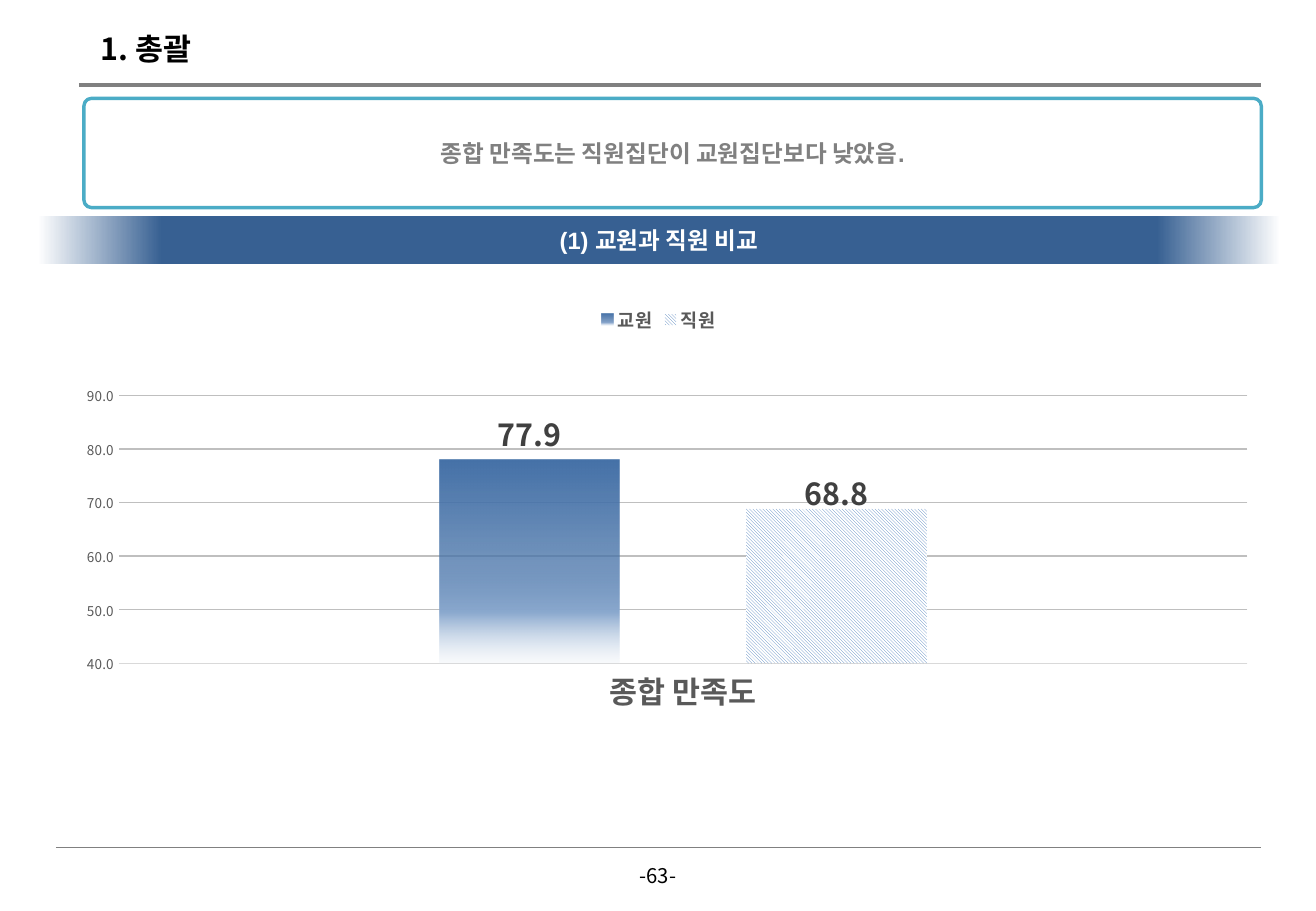
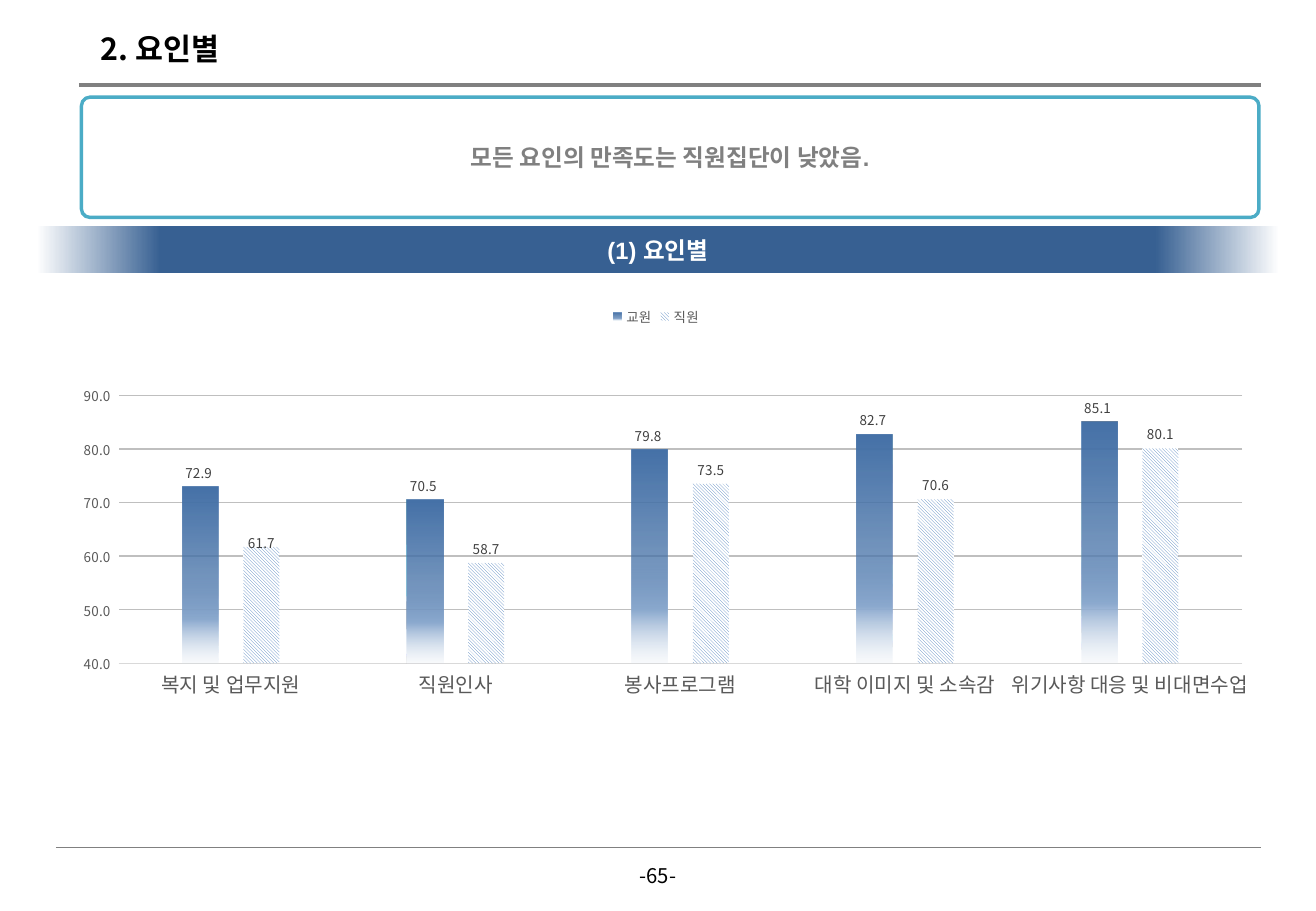
"""Build two satisfaction survey slides, each with a message, a band and a column chart."""
from lxml import etree
from pptx import Presentation
from pptx.chart.data import CategoryChartData
from pptx.dml.color import RGBColor
from pptx.enum import chart as ch, dml, shapes, text
from pptx.oxml.ns import qn
from pptx.util import Inches, Pt

WIDTH, HEIGHT = 10.83, 7.5
HANGUL = "Noto Sans CJK KR"
GRAY, TEAL, NAVY, WHITE, BLACK = "808080", "4BACC6", "376092", "FFFFFF", "000000"
AXIS_TEXT, LABEL_TEXT, AXIS_LINE, GRID = "595959", "404040", "D9D9D9", "BFBFBF"
HATCH = "4F81BD"
BAND_STOPS = [(0, WHITE, 100), (10, NAVY, 100), (90, NAVY, 100), (100, WHITE, 100)]
COLUMN_STOPS = [(0, "4672A8", 100), (51, "4672A8", 75), (75, "8CAACF", 100), (100, "D9E3EF", 15)]
RULES = [(0.65, 0.7, 2), (0.46, 6.98, 0.5)]
RULE_END = 10.38
PLOT = {"x": 0.041, "y": 0.199, "w": 0.959, "h": 0.519}
PLAIN, SIGNED = "###0.0", "0.0_);[Red]\\(0.0\\)"

SLIDES = [
    dict(title="1. 총괄", page="-63-",
         message="종합 만족도는 직원집단이 교원집단보다 낮았음.", message_at=(0.69, 0.81, 9.69, 0.9),
         band="(1) 교원과 직원 비교", band_at=(0.31, 1.78, 10.23, 0.39),
         factors=["종합 만족도"], scores={"교원": [77.9], "직원": [68.8]},
         formats=[PLAIN, PLAIN], bold=True, factor_size=18, legend_size=11, label_size=18),
    dict(title="2. 요인별", page="-65-",
         message="모든 요인의 만족도는 직원집단이 낮았음.", message_at=(0.67, 0.8, 9.69, 0.99),
         band="(1) 요인별", band_at=(0.3, 1.86, 10.23, 0.39),
         factors=["복지 및 업무지원", "직원인사", "봉사프로그램", "대학 이미지 및 소속감", "위기사항 대응 및 비대면수업"],
         scores={"교원": [72.9, 70.5, 79.8, 82.7, 85.1], "직원": [61.7, 58.7, 73.5, 70.6, 80.1]},
         formats=[SIGNED, PLAIN], bold=False, factor_size=12, legend_size=8, label_size=8),
]


def color(value):
    return RGBColor.from_string(value)


def inches(box):
    return [Inches(length) for length in box]


def style(font, size, fill, bold=False, face=HANGUL):
    font.size, font.bold, font.name = Pt(size), bold, face
    font.fill.solid()
    font.fill.fore_color.rgb = color(fill)
    east = etree.Element(qn("a:ea"), typeface=HANGUL)
    font._element.find(qn("a:latin")).addnext(east)


def write(shape, words, align=text.PP_ALIGN.CENTER, wrap=True, anchor=text.MSO_ANCHOR.MIDDLE,
          side=0.1, **look):
    frame = shape.text_frame
    frame.word_wrap, frame.vertical_anchor = wrap, anchor
    frame.margin_left = frame.margin_right = Inches(side)
    paragraph = frame.paragraphs[0]
    paragraph.alignment = align
    run = paragraph.add_run()
    run.text = words
    style(run.font, **look)


def gradient(fill, owner, stops, angle):
    fill.gradient()
    grad = owner.find(".//" + qn("a:gradFill"))
    listing = grad.find(qn("a:gsLst"))
    for stop in list(listing):
        listing.remove(stop)
    for share, value, opacity in stops:
        stop = etree.SubElement(listing, qn("a:gs"), pos=str(share * 1000))
        tone = etree.SubElement(stop, qn("a:srgbClr"), val=value)
        if opacity < 100:
            etree.SubElement(tone, qn("a:alpha"), val=str(opacity * 1000))
    grad.find(qn("a:lin")).set("ang", str(angle * 60000))


def manual_layout(parent, **values):
    layout = etree.SubElement(parent, qn("c:layout"))
    manual = etree.SubElement(layout, qn("c:manualLayout"))
    for tag, value in values.items():
        etree.SubElement(manual, qn("c:" + tag), val=str(value))
    return layout


def add_frame(slide, title, page):
    for left, top, weight in RULES:
        rule = slide.shapes.add_connector(
            shapes.MSO_CONNECTOR.STRAIGHT, *inches((left, top, RULE_END, top)))
        rule.line.color.rgb, rule.line.width = color(GRAY), Pt(weight)
        etree.SubElement(rule._element.spPr, qn("a:effectLst"))
    write(slide.shapes.add_textbox(*inches((0.73, 0.2, 1.26, 0.4))), title,
          align=text.PP_ALIGN.LEFT, wrap=False, size=18, fill=BLACK, bold=True)
    write(slide.shapes.add_textbox(*inches((5.14, 7.06, 0.55, 0.3))), page,
          wrap=False, size=12, fill=BLACK)


def add_message(slide, words, box):
    message = slide.shapes.add_shape(shapes.MSO_SHAPE.ROUNDED_RECTANGLE, *inches(box))
    message.shadow.inherit = False
    message.adjustments[0] = 0.071
    message.fill.solid()
    message.fill.fore_color.rgb = color(WHITE)
    message.line.color.rgb, message.line.width = color(TEAL), Pt(2)
    write(message, words, side=0.2, size=14, fill=GRAY, bold=True, face="Arial")


def add_band(slide, words, box):
    band = slide.shapes.add_shape(shapes.MSO_SHAPE.RECTANGLE, *inches(box))
    band.shadow.inherit = False
    band.line.fill.background()
    gradient(band.fill, band._element, BAND_STOPS, 0)
    write(band, words, size=14, fill=WHITE, bold=True, face="Arial")


def format_axes(chart, content):
    factors, scale = chart.category_axis, chart.value_axis
    for axis in (factors, scale):
        axis.major_tick_mark = axis.minor_tick_mark = ch.XL_TICK_MARK.NONE
    style(factors.tick_labels.font, content["factor_size"], AXIS_TEXT, content["bold"])
    factors.format.line.color.rgb, factors.format.line.width = color(AXIS_LINE), Pt(0.75)
    style(scale.tick_labels.font, 8, AXIS_TEXT)
    scale.minimum_scale, scale.maximum_scale, scale.major_unit = 40, 90, 10
    scale.tick_labels.number_format = content["formats"][0]
    scale.tick_labels.number_format_is_linked = False
    scale.format.line.fill.background()
    grid = scale.major_gridlines.format.line
    grid.color.rgb, grid.width = color(GRID), Pt(0.75)


def format_columns(plot, content):
    plot.gap_width, plot.overlap, plot.vary_by_categories = 355, -70, False
    label_look = (content["label_size"], LABEL_TEXT, content["bold"])
    teachers, staff = plot.series
    gradient(teachers.format.fill, teachers._element, COLUMN_STOPS, 90)
    hatch = staff.format.fill
    hatch.patterned()
    hatch.pattern = dml.MSO_PATTERN.LIGHT_DOWNWARD_DIAGONAL
    hatch.fore_color.rgb, hatch.back_color.rgb = color(HATCH), color(WHITE)
    for group, number_format in zip((teachers, staff), content["formats"]):
        group.invert_if_negative = False
        labels = group.data_labels
        labels.show_value = True
        labels.number_format, labels.number_format_is_linked = number_format, False
        labels.position = ch.XL_LABEL_POSITION.OUTSIDE_END
        style(labels.font, *label_look)
    lowered = staff.points[0].data_label
    lowered.position = ch.XL_LABEL_POSITION.OUTSIDE_END
    style(lowered.font, *label_look)
    label = staff._element.find(".//" + qn("c:dLbl"))
    label.find(qn("c:idx")).addnext(manual_layout(label, x=0, y=0.02))


def add_scores(slide, content):
    data = CategoryChartData(number_format=PLAIN)
    data.categories = content["factors"]
    for group, values in content["scores"].items():
        data.add_series(group, values)
    chart = slide.shapes.add_chart(
        ch.XL_CHART_TYPE.COLUMN_CLUSTERED, *inches((0.58, 2.41, 9.69, 4.25)), data).chart
    chart.has_title = False
    style(chart.font, 8, BLACK)
    chart.has_legend = True
    chart.legend.position = ch.XL_LEGEND_POSITION.TOP
    chart.legend.include_in_layout = False
    style(chart.legend.font, content["legend_size"], AXIS_TEXT, content["bold"])
    format_axes(chart, content)
    format_columns(chart.plots[0], content)
    area = chart._chartSpace.find(".//" + qn("c:plotArea"))
    for old in area.findall(qn("c:layout")):
        area.remove(old)
    area.insert(0, manual_layout(area, layoutTarget="inner", xMode="edge", yMode="edge", **PLOT))


def main():
    deck = Presentation()
    deck.slide_width, deck.slide_height = inches((WIDTH, HEIGHT))
    for content in SLIDES:
        slide = deck.slides.add_slide(deck.slide_layouts[6])
        add_frame(slide, content["title"], content["page"])
        add_message(slide, content["message"], content["message_at"])
        add_band(slide, content["band"], content["band_at"])
        add_scores(slide, content)
    deck.save("out.pptx")


if __name__ == "__main__":
    main()
